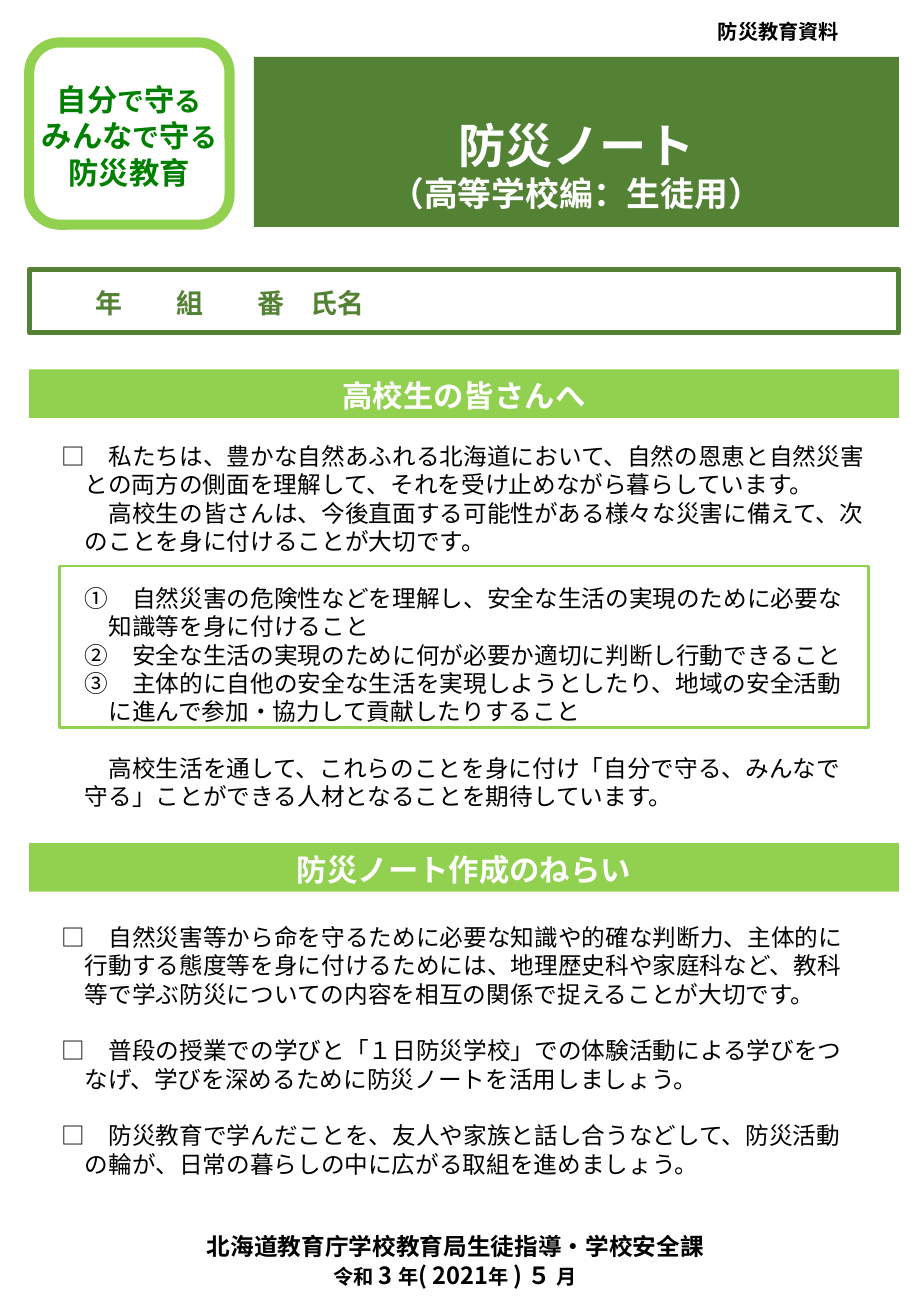
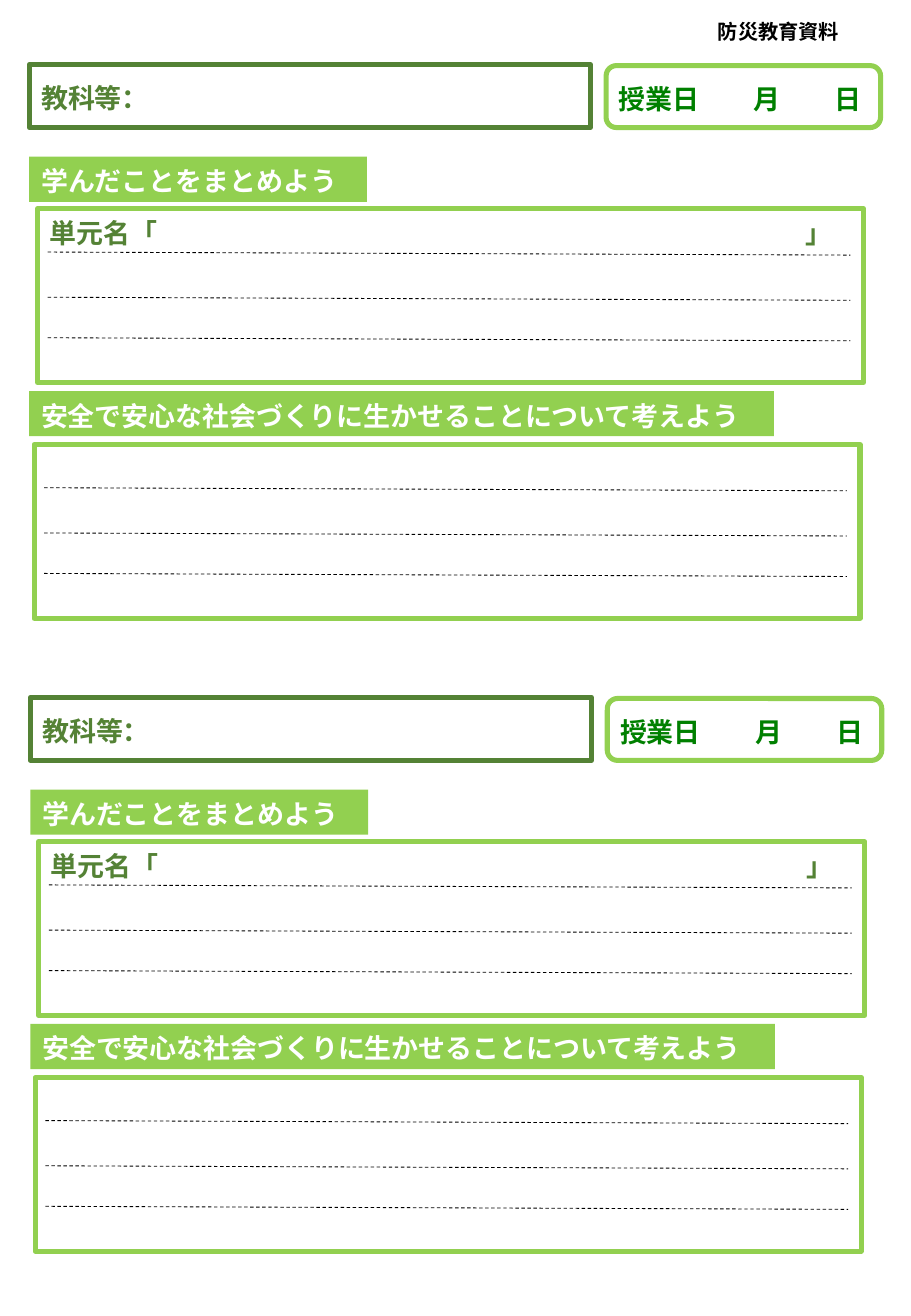
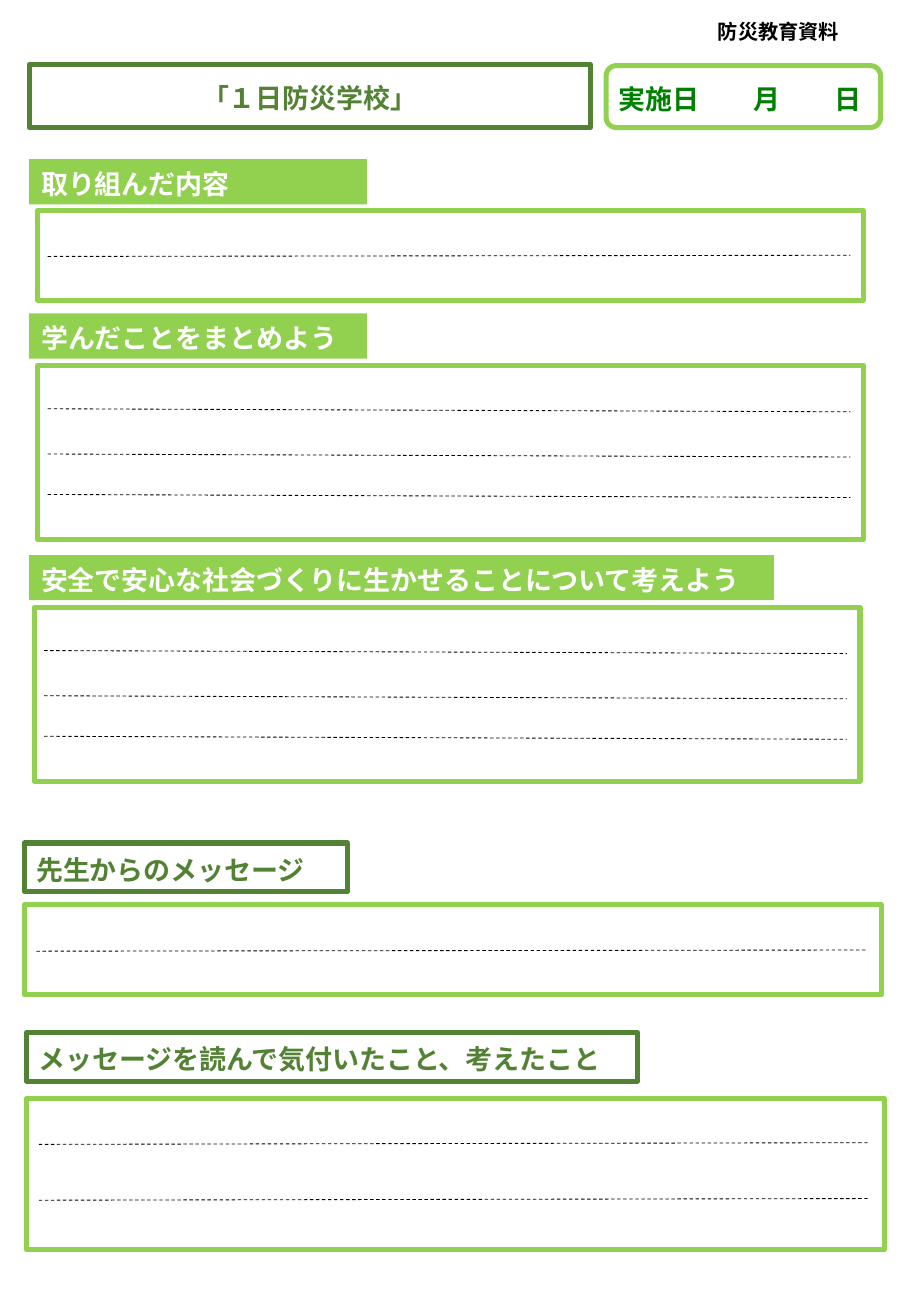
"""Build the three-page disaster prevention notebook for high school students."""
from lxml import etree
from pptx import Presentation
from pptx.dml.color import RGBColor
from pptx.enum.dml import MSO_LINE
from pptx.enum.shapes import MSO_CONNECTOR, MSO_SHAPE as SHAPE
from pptx.enum.text import MSO_ANCHOR as ANCHOR, PP_ALIGN as ALIGN
from pptx.oxml.ns import qn
from pptx.util import Pt

DARK, LIGHT, LETTER = "548235", "92D050", "008000"
WHITE, BLACK = "FFFFFF", "000000"
NOTO, ARIAL = "Noto Sans CJK JP", "Arial"
LEADING, BASELINE_SHIFT = 1.2, 0.07
color = RGBColor.from_string


def add_box(page, x, y, w, h, fill=None, line=None, weight=3, kind=SHAPE.RECTANGLE):
    box = page.shapes.add_shape(kind, Pt(x), Pt(y), Pt(w), Pt(h))
    box.shadow.inherit = False
    if fill:
        box.fill.solid()
        box.fill.fore_color.rgb = color(fill)
    else:
        box.fill.background()
    if line:
        box.line.color.rgb = color(line)
        box.line.width = Pt(weight)
    else:
        box.line.fill.background()
    return box


def write(box, paras, size, ink, font=NOTO, bold=True, align=ALIGN.LEFT,
          middle=False, left=7.2, top=3.6, tabs=()):
    frame = box.text_frame
    frame.word_wrap = True
    frame.vertical_anchor = ANCHOR.MIDDLE if middle else ANCHOR.TOP
    frame.margin_left = frame.margin_right = Pt(left)
    shift = BASELINE_SHIFT * size * (2 if middle else 1)
    frame.margin_top, frame.margin_bottom = Pt(top + shift), Pt(top)
    for index, spans in enumerate(paras):
        para = frame.paragraphs[0] if index == 0 else frame.add_paragraph()
        para.alignment = align
        if isinstance(spans, str):
            para.text = spans
            sizes = [size] * len(para.runs)
        else:
            for text, _ in spans:
                para.add_run().text = text
            sizes = [points for _, points in spans]
        para.line_spacing = Pt(round(LEADING * max(sizes), 2))
        for span, points in zip(para.runs, sizes):
            span.font.size, span.font.bold, span.font.name = Pt(points), bold, font
            span.font.color.rgb = color(ink)
            asian = etree.SubElement(span.font._element, qn("a:ea"))
            asian.set("typeface", NOTO)
        if tabs:
            stops = etree.SubElement(para._p.get_or_add_pPr(), qn("a:tabLst"))
            for position in tabs:
                stop = etree.SubElement(stops, qn("a:tab"))
                stop.set("pos", str(Pt(position)))
                stop.set("algn", "l")


deck = Presentation()
deck.slide_width, deck.slide_height = Pt(540), Pt(780)
pages = [deck.slides.add_slide(deck.slide_layouts[6]) for _ in range(3)]
cover, lessons, school_day = pages

for page in pages:
    label = add_box(page, 390.2, 5, 142.6, 19.4, WHITE)
    write(label, ["防災教育資料"], 12, BLACK, align=ALIGN.CENTER, top=5.8)

title = add_box(cover, 150.5, 33.8, 382.3, 100.8, DARK)
write(title, [[("防災ノート", 28)], [("（高等学校編：生徒用）", 20)]], 28, WHITE, ARIAL,
      align=ALIGN.CENTER, top=33)

emblem = add_box(cover, 17.3, 25.2, 118.8, 108, line=LIGHT, weight=6,
                 kind=SHAPE.ROUNDED_RECTANGLE)
write(emblem, [[("自分", 18), ("で", 16), ("守", 18), ("る", 16)],
               [("みんな", 18), ("で", 16), ("守", 18), ("る", 16)],
               [("防災教育", 18)]],
      18, LETTER, align=ALIGN.CENTER, middle=True, left=0, top=0)

name_box = add_box(cover, 17.3, 159.8, 515.5, 37.4, line=DARK)
write(name_box, ["\t年\t組\t番\t氏名"], 16, DARK, ARIAL, middle=True,
      tabs=(32, 80, 128, 160))

for y, heading in ((218.9, "高校生の皆さんへ"), (499.7, "防災ノート作成のねらい")):
    band = add_box(cover, 17.3, y, 515.5, 28.8, LIGHT)
    write(band, [heading], 18, WHITE, align=ALIGN.CENTER)

add_box(cover, 35.3, 335.5, 479.5, 95.8, line=LIGHT, weight=1.5)
greeting = [
    ("□　私たちは、豊かな自然あふれる北海道において、自然の恩恵と自然災害\v"
     "との両方の側面を理解して、それを受け止めながら暮らしています。", 14, -14, 0),
    ("高校生の皆さんは、今後直面する可能性がある様々な災害に備えて、次\v"
     "のことを身に付けることが大切です。", 14, 14, 0),
    ("①　自然災害の危険性などを理解し、安全な生活の実現のために必要な\v"
     "知識等を身に付けること", 28, -14, 1),
    ("②　安全な生活の実現のために何が必要か適切に判断し行動できること", 28, -14, 0),
    ("③　主体的に自他の安全な生活を実現しようとしたり、地域の安全活動\v"
     "に進んで参加・協力して貢献したりすること", 28, -14, 0),
    ("高校生活を通して、これらのことを身に付け「自分で守る、みんなで\v"
     "守る」ことができる人材となることを期待しています。", 14, 14, 1),
]
aims = [
    ("□　自然災害等から命を守るために必要な知識や的確な判断力、主体的に\v"
     "行動する態度等を身に付けるためには、地理歴史科や家庭科など、教科\v"
     "等で学ぶ防災についての内容を相互の関係で捉えることが大切です。", 14, -14, 0),
    ("□　普段の授業での学びと「１日防災学校」での体験活動による学びをつ\v"
     "なげ、学びを深めるために防災ノートを活用しましょう。", 14, -14, 1),
    ("□　防災教育で学んだことを、友人や家族と話し合うなどして、防災活動\v"
     "の輪が、日常の暮らしの中に広がる取組を進めましょう。", 14, -14, 1),
]
for y, h, items in ((259.9, 209.5, greeting), (545, 160.6, aims)):
    body = add_box(cover, 35.3, y, 497.5, h)
    write(body, [item[0] for item in items], 14, BLACK, bold=False, left=1, top=1)
    for para, (_, margin, indent, gap) in zip(body.text_frame.paragraphs, items):
        para.space_before = Pt(gap * LEADING * 14)
        para._p.pPr.set("marL", str(Pt(margin)))
        para._p.pPr.set("indent", str(Pt(indent)))

publisher = cover.shapes.add_textbox(Pt(0), Pt(725.8), Pt(540), Pt(40.3))
write(publisher, ["北海道教育庁学校教育局生徒指導・学校安全課",
                  [("令和 ", 12), ("3 ", 14), ("年", 12), ("( 2021", 14),
                   ("年 ", 12), (") ５ ", 14), ("月", 12)]],
      14, BLACK, align=ALIGN.CENTER)

SUMMARY, SOCIETY = "学んだことをまとめよう", "安全で安心な社会づくりに生かせることについて考えよう"
UNIT = "単元名「\t」"
THREE_RULES = (25.6, 52.4, 76.4)
subjects = []
banners = [(school_day, 17.3, 94.3, 200.2, "取り組んだ内容"),
           (school_day, 17.3, 185.8, 200.2, SUMMARY),
           (school_day, 17.3, 329, 441.4, SOCIETY)]
panels = [(school_day, 22.3, 124.6, 489.6, 53.3, (27.4,), -0.7, 6, ""),
          (school_day, 22.3, 216.7, 489.6, 103, THREE_RULES, 1.8, 6, ""),
          (school_day, 20.2, 360, 489.6, 103, THREE_RULES, 1.8, 6, ""),
          (school_day, 14.4, 536.4, 508.3, 53.3, (27.4,), -0.7, 7.2, ""),
          (school_day, 15.8, 650.9, 508.3, 90, (27.4, 60.5), -1, 7.2, "")]
for dx, dy in ((0, 0), (0.7, 375.1)):
    subjects.append((lessons, dx, dy, "教科等：", ALIGN.LEFT, "授業日"))
    banners += [(lessons, 17.3 + dx, 92.9 + dy, 200.2, SUMMARY),
                (lessons, 17.3 + dx, 231.8 + dy, 441.4, SOCIETY)]
    panels += [(lessons, 22.3 + dx, 123.8 + dy, 489.6, 103, THREE_RULES, 1.8, 6, UNIT),
               (lessons, 20.2 + dx, 263.5 + dy, 489.6, 103, THREE_RULES, 1.8, 6, "")]
subjects.append((school_day, 0, 0, "「１日防災学校」", ALIGN.CENTER, "実施日"))

for page, dx, dy, subject, align, day in subjects:
    subject_box = add_box(page, 17.3 + dx, 38.2 + dy, 332.6, 37.4, line=DARK)
    write(subject_box, [subject], 16, DARK, ARIAL, align=align, middle=True)
    date_box = add_box(page, 359.3 + dx, 38.9 + dy, 162.7, 36.7, line=LIGHT,
                       kind=SHAPE.ROUNDED_RECTANGLE)
    write(date_box, [day + "\t月\t日"], 16, LETTER, middle=True, left=5.8, top=0,
          tabs=(80, 128))

for page, x, y, w, heading in banners:
    write(add_box(page, x, y, w, 26.8, LIGHT), [heading], 16, WHITE)

for x, y, w, heading in ((14.4, 499.7, 191.5, "先生からのメッセージ"),
                         (15.8, 612, 362.2, "メッセージを読んで気付いたこと、考えたこと")):
    message_box = add_box(school_day, x, y, w, 28.8, line=DARK)
    write(message_box, [heading], 16, DARK, ARIAL, middle=True)

for page, x, y, w, h, rules, drop, margin, text in panels:
    panel = add_box(page, x, y, w, h, WHITE, LIGHT)
    if text:
        write(panel, [text], 16, DARK, tabs=(448,))
    start, end = x + margin, x + w - 1.3 * margin
    for offset in rules:
        rule = page.shapes.add_connector(MSO_CONNECTOR.STRAIGHT, Pt(start), Pt(y + offset),
                                         Pt(end), Pt(y + offset + drop))
        rule.line.color.rgb = color(BLACK)
        rule.line.width = Pt(0.5)
        rule.line.dash_style = MSO_LINE.DASH
        etree.SubElement(rule._element.spPr, qn("a:effectLst"))

deck.save("out.pptx")
